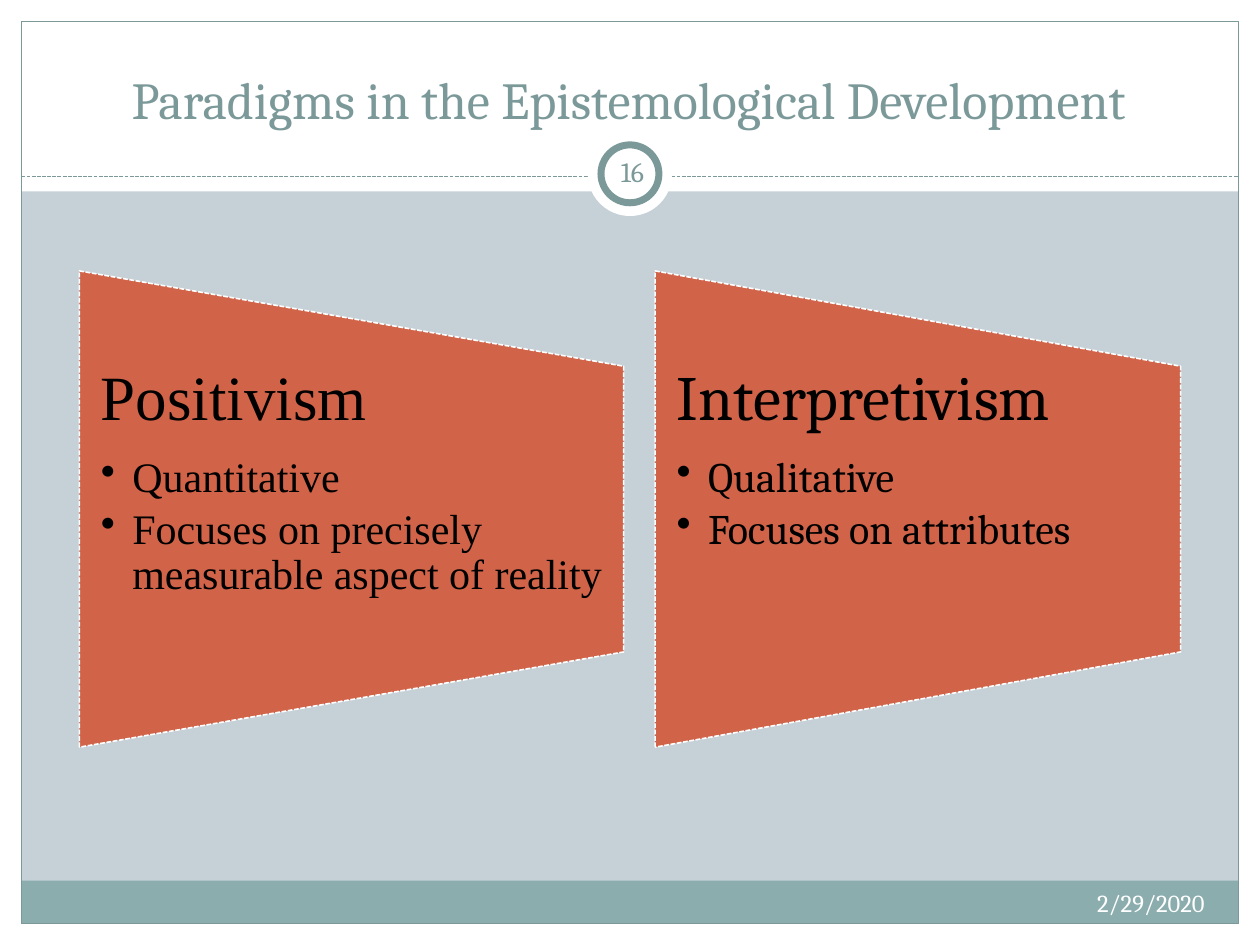
from lxml import etree
from pptx import Presentation
from pptx.dml.color import RGBColor
from pptx.enum.dml import MSO_LINE
from pptx.enum.shapes import MSO_CONNECTOR, MSO_SHAPE
from pptx.enum.text import MSO_ANCHOR, MSO_AUTO_SIZE, PP_ALIGN
from pptx.oxml.ns import qn
from pptx.util import Inches, Pt

RECT, OVAL = MSO_SHAPE.RECTANGLE, MSO_SHAPE.OVAL
TRAPEZOID = MSO_SHAPE.FLOWCHART_MANUAL_OPERATION
STRAIGHT = MSO_CONNECTOR.STRAIGHT
DASH = MSO_LINE.SQUARE_DOT
TOP, MIDDLE, BOTTOM = MSO_ANCHOR.TOP, MSO_ANCHOR.MIDDLE, MSO_ANCHOR.BOTTOM
LEFT, CENTER, RIGHT = PP_ALIGN.LEFT, PP_ALIGN.CENTER, PP_ALIGN.RIGHT
NO_FIT = MSO_AUTO_SIZE.NONE

WIDE, HIGH, EDGE = 10, 7.5, 0.17
RULE = 1.4
WHITE, BLACK = "FFFFFF", "000000"
PALE, TEAL, GRAY, RUST = "C5D1D7", "8CADAE", "7C999A", "D16349"
SERIF, TIMES = "Cambria", "Times New Roman"

PANEL_TOP, PANEL_HIGH = 2.15, 3.78
PANELS = [
    (0.63, 4.32, TIMES, "Positivism",
     ["Quantitative", "Focuses on precisely measurable aspect of reality"]),
    (5.2, 4.17, SERIF, "Interpretivism",
     ["Qualitative", "Focuses on attributes"]),
]


def color(code):
    return RGBColor.from_string(code)


def outline(line, code, width, dash=None):
    line.color.rgb = color(code)
    line.width = Pt(width)
    if dash:
        line.dash_style = dash


def shape(slide, kind, box, fill=None, line=None):
    """Add a preset shape; line holds colour, width and, if any, dash."""
    item = slide.shapes.add_shape(kind, *map(Inches, box))
    item.shadow.inherit = False
    if fill:
        item.fill.solid()
        item.fill.fore_color.rgb = color(fill)
    else:
        item.fill.background()
    if line:
        outline(item.line, *line)
    else:
        item.line.fill.background()
    return item


def disc(slide, size, line=None):
    """Add a white circle centred on the header rule."""
    box = ((WIDE - size) / 2, RULE - 0.02 - size / 2, size, size)
    shape(slide, OVAL, box, WHITE, line)


def frame(item, anchor, sides=0.1, ends=0.05):
    text = item.text_frame
    text.word_wrap = True
    text.auto_size = NO_FIT
    text.vertical_anchor = anchor
    text.margin_left = text.margin_right = Inches(sides)
    text.margin_top = text.margin_bottom = Inches(ends)
    return text


def style(para, words, size, code, face=SERIF, align=LEFT):
    para.text = words
    para.alignment = align
    font = para.font
    font.size, font.name = Pt(size), face
    font.color.rgb = color(code)


def label(slide, box, words, size, code, align, anchor=TOP, sides=0.1):
    item = slide.shapes.add_textbox(*map(Inches, box))
    text = frame(item, anchor, sides)
    style(text.paragraphs[0], words, size, code, align=align)


def space(para, after):
    para.line_spacing = 0.9
    para.space_after = Pt(after)


def bullet(para):
    props = para._p.get_or_add_pPr()
    props.set("marL", str(Inches(0.25)))
    props.set("indent", str(-Inches(0.25)))
    etree.SubElement(props, qn("a:buChar")).set("char", "•")


def panel(slide, left, width, face, head, points):
    """Add a trapezoid turned on its side, with a heading and bullets."""
    shift = (width - PANEL_HIGH) / 2
    box = (left + shift, PANEL_TOP - shift, PANEL_HIGH, width)
    shape(slide, TRAPEZOID, box, RUST, (WHITE, 0.9, DASH)).rotation = 270

    high = PANEL_HIGH * 0.6
    box = (left, PANEL_TOP + PANEL_HIGH * 0.2, width, high)
    item = slide.shapes.add_textbox(*map(Inches, box))
    text = frame(item, TOP, EDGE, 0)
    para = text.paragraphs[0]
    space(para, 12.6)
    style(para, head, 36, BLACK, face)
    for point in points:
        para = text.add_paragraph()
        para.level = 1
        space(para, 3.6)
        bullet(para)
        style(para, point, 24, BLACK, face)


def backdrop(slide):
    fill = slide.background.fill
    fill.solid()
    fill.fore_color.rgb = color(PALE)
    inner = WIDE - 2 * EDGE
    for box in [(0, HIGH - EDGE, WIDE, EDGE), (0, 0, WIDE, 1.52),
                (0, 0, EDGE, HIGH), (WIDE - EDGE, 0, EDGE, HIGH)]:
        shape(slide, RECT, box, WHITE)
    shape(slide, RECT, (EDGE, 6.99, inner, 0.34), TEAL)
    shape(slide, RECT, (EDGE, EDGE, inner, HIGH - 2 * EDGE),
          line=(GRAY, 0.75))
    ends = (EDGE, RULE, WIDE - EDGE, RULE)
    rule = slide.shapes.add_connector(STRAIGHT, *map(Inches, ends))
    outline(rule.line, GRAY, 0.75, DASH)
    etree.SubElement(rule._element.spPr, qn("a:effectLst"))
    disc(slide, 0.67)
    disc(slide, 0.46, (GRAY, 4))


def heading(slide, words):
    title = slide.shapes.title
    title.left, title.top = Inches(0.33), Inches(0.25)
    title.width, title.height = Inches(9.33), Inches(0.83)
    text = frame(title, BOTTOM)
    style(text.paragraphs[0], words, 29.7, GRAY, align=CENTER)
    # Bring the title in front of the white header band
    slide.shapes._spTree.append(title._element)


def main():
    deck = Presentation()
    deck.slide_width, deck.slide_height = Inches(WIDE), Inches(HIGH)
    slide = deck.slides.add_slide(deck.slide_layouts[5])
    backdrop(slide)
    heading(slide, "Paradigms in the Epistemological Development")
    label(slide, (6.33, 7, 3.33, 0.4), "2/29/2020", 14, WHITE, RIGHT)
    label(slide, (4.77, 1.12, 0.5, 0.48), "16", 16, GRAY, CENTER,
          MIDDLE, 0.05)
    for item in PANELS:
        panel(slide, *item)
    deck.save("out.pptx")


if __name__ == "__main__":
    main()
